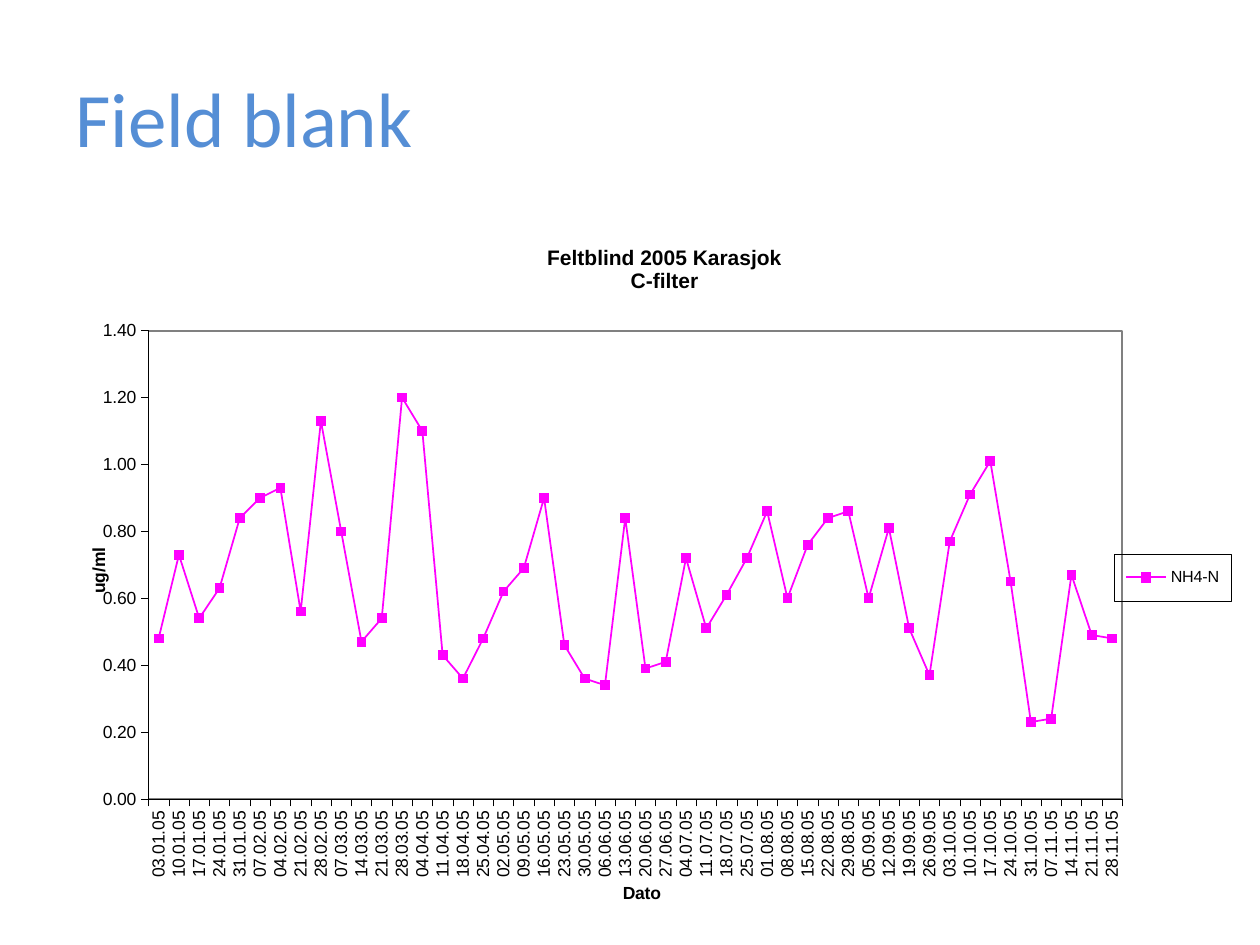
from dataclasses import dataclass

from pptx import Presentation
from pptx.chart.data import CategoryChartData
from pptx.dml.color import RGBColor
from pptx.enum.chart import XL_CHART_TYPE, XL_LEGEND_POSITION, XL_MARKER_STYLE, XL_TICK_MARK
from pptx.enum.text import MSO_ANCHOR
from pptx.oxml import parse_xml
from pptx.oxml.ns import nsdecls, qn
from pptx.util import Inches, Pt

LINE = XL_CHART_TYPE.LINE_MARKERS
RIGHT = XL_LEGEND_POSITION.RIGHT
SQUARE = XL_MARKER_STYLE.SQUARE
OUT, NONE = XL_TICK_MARK.OUTSIDE, XL_TICK_MARK.NONE
MIDDLE = MSO_ANCHOR.MIDDLE

DATES = """
03.01.05 10.01.05 17.01.05 24.01.05 31.01.05 07.02.05 04.02.05 21.02.05
28.02.05 07.03.05 14.03.05 21.03.05 28.03.05 04.04.05 11.04.05 18.04.05
25.04.05 02.05.05 09.05.05 16.05.05 23.05.05 30.05.05 06.06.05 13.06.05
20.06.05 27.06.05 04.07.05 11.07.05 18.07.05 25.07.05 01.08.05 08.08.05
15.08.05 22.08.05 29.08.05 05.09.05 12.09.05 19.09.05 26.09.05 03.10.05
10.10.05 17.10.05 24.10.05 31.10.05 07.11.05 14.11.05 21.11.05 28.11.05
""".split()
LEVELS = [
    0.48, 0.73, 0.54, 0.63, 0.84, 0.9, 0.93, 0.56, 1.13, 0.8, 0.47, 0.54,
    1.2, 1.1, 0.43, 0.36, 0.48, 0.62, 0.69, 0.9, 0.46, 0.36, 0.34, 0.84,
    0.39, 0.41, 0.72, 0.51, 0.61, 0.72, 0.86, 0.6, 0.76, 0.84, 0.86, 0.6,
    0.81, 0.51, 0.37, 0.77, 0.91, 1.01, 0.65, 0.23, 0.24, 0.67, 0.49, 0.48,
]


@dataclass(frozen=True)
class Theme:
    head: str = "558ED5"
    ink: str = "000000"
    frame: str = "808080"
    mark: str = "FF00FF"
    title: str = "Calibri"
    body: str = "Arial"
    big: float = 44
    mid: float = 12
    small: float = 10
    key: float = 9.2


class Deck:
    COLS, ROWS = 100, 150

    def __init__(self, theme):
        self.theme = theme
        self.prs = Presentation()
        self.prs.slide_width, self.prs.slide_height = Inches(10), Inches(7.5)
        self.slide = self.prs.slides.add_slide(self.prs.slide_layouts[6])

    def box(self, col, row, wide, high):
        x, y = self.prs.slide_width / self.COLS, self.prs.slide_height / self.ROWS
        return int(col * x), int(row * y), int(wide * x), int(high * y)

    def style(self, font, size, name=None, color=None, bold=False):
        font.name = name or self.theme.body
        font.size = Pt(size)
        font.bold = bold
        font.color.rgb = RGBColor.from_string(color or self.theme.ink)

    def head(self, text, *cells):
        frame = self.slide.shapes.add_textbox(*self.box(*cells)).text_frame
        frame.word_wrap = True
        frame.vertical_anchor = MIDDLE
        frame.text = text
        self.style(frame.paragraphs[0].runs[0].font, self.theme.big,
                   self.theme.title, self.theme.head)

    def layout(self, x, y, wide=None, high=None, inner=False):
        """Manual place of a chart part, in shares of the chart."""
        tags = [("layoutTarget", "inner")] if inner else []
        tags += [("xMode", "edge"), ("yMode", "edge"), ("x", x), ("y", y)]
        if wide:
            tags += [("w", wide), ("h", high)]
        body = "".join(f'<c:{tag} val="{val}"/>' for tag, val in tags)
        return parse_xml(f'<c:layout {nsdecls("c")}><c:manualLayout>{body}'
                         '</c:manualLayout></c:layout>')

    def place(self, node, new):
        old = node.find(qn("c:layout"))
        if old is not None:
            node.remove(old)
        lid = node.find(qn("c:overlay"))
        if lid is None:
            node.insert(0, new)
        else:
            lid.addprevious(new)

    def border(self, color, width):
        return parse_xml(
            f'<c:spPr {nsdecls("c", "a")}><a:noFill/><a:ln w="{Pt(width)}"><a:solidFill>'
            f'<a:srgbClr val="{color}"/></a:solidFill></a:ln></c:spPr>')

    def label(self, title, text, size, x, y):
        title.text_frame.text = text
        for para in title.text_frame.paragraphs:
            for run in para.runs:
                self.style(run.font, size, bold=True)
        self.place(title._element, self.layout(x, y))

    def axis(self, axis, text, x, y):
        axis.has_major_gridlines = False
        axis.major_tick_mark, axis.minor_tick_mark = OUT, NONE
        axis.format.line.color.rgb = RGBColor.from_string(self.theme.ink)
        axis.format.line.width = Pt(0.25)
        self.style(axis.tick_labels.font, self.theme.small)
        self.label(axis.axis_title, text, self.theme.small, x, y)

    def chart(self, name, cats, vals, *cells):
        theme = self.theme
        data = CategoryChartData(number_format="0.00")
        data.categories = cats
        data.add_series(name, vals)
        chart = self.slide.shapes.add_chart(LINE, *self.box(*cells), data).chart
        self.style(chart.font, theme.small)
        chart.has_title = True
        self.label(chart.chart_title, "Feltblind 2005 Karasjok\nC-filter",
                   theme.mid, 0.41, 0.03)

        # Axes
        self.axis(chart.category_axis, "Dato", 0.475, 0.95)
        turn = chart.category_axis._element.find(qn("c:txPr")).find(qn("a:bodyPr"))
        turn.set("rot", "-5400000")
        turn.set("vert", "horz")
        level = chart.value_axis
        self.axis(level, "ug/ml", 0.018, 0.468)
        level.minimum_scale, level.maximum_scale, level.major_unit = 0, 1.4, 0.2
        level.tick_labels.number_format = "0.00"
        level.tick_labels.number_format_is_linked = False

        # Line and markers
        chart.plots[0].vary_by_categories = False
        line = chart.plots[0].series[0]
        line.smooth = False
        pink = RGBColor.from_string(theme.mark)
        line.format.line.color.rgb = pink
        line.format.line.width = Pt(1)
        line.marker.style, line.marker.size = SQUARE, 5
        line.marker.format.fill.solid()
        line.marker.format.fill.fore_color.rgb = pink
        line.marker.format.line.color.rgb = pink

        # Plot frame
        area = chart._chartSpace.chart.plotArea
        self.place(area, self.layout(0.073, 0.159, 0.831, 0.676, inner=True))
        area.append(self.border(theme.frame, 1))

        # Legend
        chart.has_legend = True
        key = chart.legend
        key.position = RIGHT
        key.include_in_layout = False
        self.style(key.font, theme.key)
        self.place(key._element, self.layout(0.897, 0.481, 0.1, 0.068))
        key._element.find(qn("c:overlay")).addnext(self.border(theme.ink, 0.25))


def main():
    deck = Deck(Theme())
    deck.head("Field blank", 5, 6, 90, 25)
    deck.chart("NH4-N", DATES, LEVELS, 5, 35, 93, 110)
    deck.prs.save("out.pptx")


if __name__ == "__main__":
    main()
